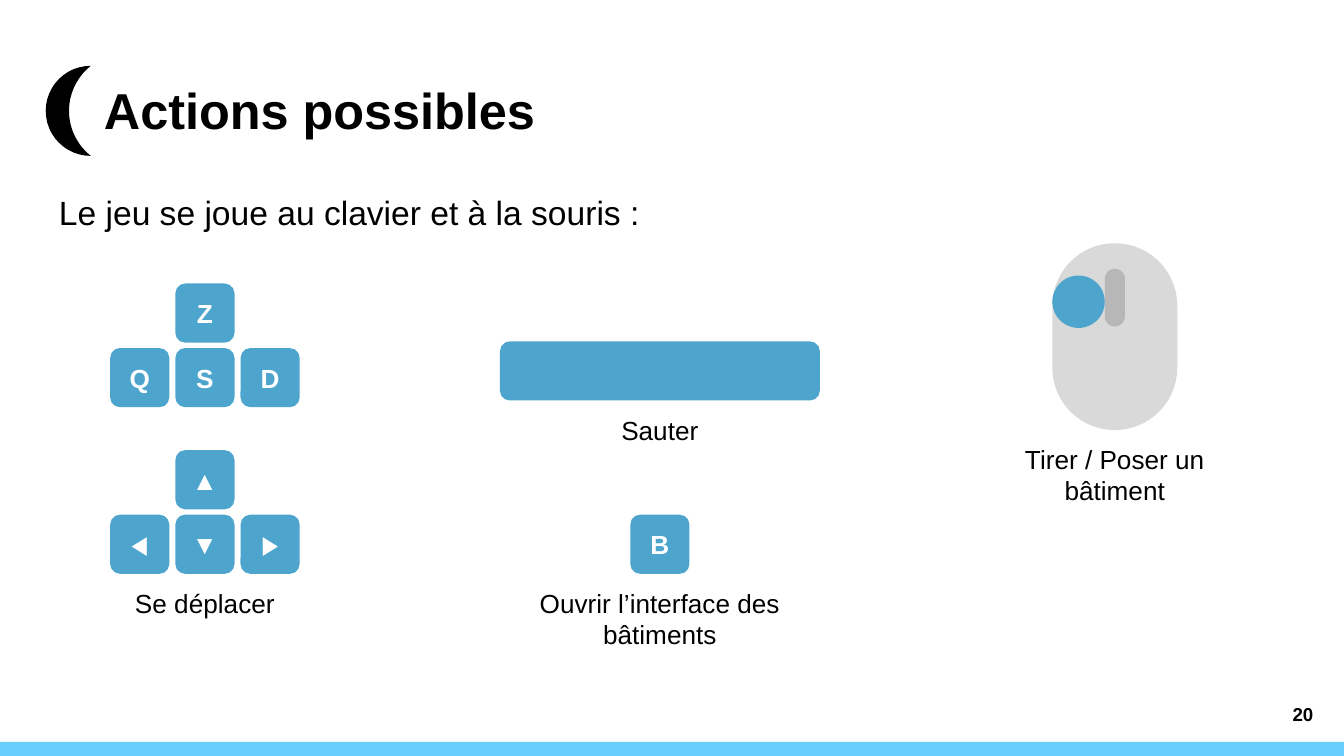
from dataclasses import dataclass

from pptx import Presentation
from pptx.dml.color import RGBColor
from pptx.enum.shapes import MSO_SHAPE
from pptx.enum.text import MSO_ANCHOR, PP_ALIGN
from pptx.util import Inches, Pt


@dataclass(frozen=True)
class Theme:
    """Colours, font and type sizes of the deck."""
    font: str = "Arial"
    ink: str = "000000"
    paper: str = "FFFFFF"
    key: str = "4DA5CE"
    band: str = "67CDFC"
    mouse: str = "D9D9D9"
    wheel: str = "B7B7B7"
    title: int = 27
    body: int = 18
    label: int = 14
    small: int = 10


THEME = Theme()
KEY = 0.44
ROUND = 0.167


def write(shape, text, size=THEME.label, color=THEME.ink, bold=False,
          align=PP_ALIGN.LEFT, anchor=MSO_ANCHOR.TOP, line=None, after=None):
    """Put one formatted paragraph into a shape."""
    frame = shape.text_frame
    frame.word_wrap = True
    frame.vertical_anchor = anchor
    frame.margin_left = frame.margin_right = Inches(0.1)
    frame.margin_top = frame.margin_bottom = Inches(0.1)
    para = frame.paragraphs[0]
    para.alignment = align
    if line:
        para.line_spacing = line
    if after:
        para.space_after = Pt(after)
    run = para.add_run()
    run.text = text
    run.font.name = THEME.font
    run.font.size = Pt(size)
    run.font.bold = bold
    run.font.color.rgb = RGBColor.from_string(color)


def add_text(slide, box, text, **style):
    """Add a text box that holds one paragraph."""
    write(slide.shapes.add_textbox(*map(Inches, box)), text, **style)


def add_form(slide, kind, box, color, adjust=None):
    """Add a flat preset shape and return it."""
    form = slide.shapes.add_shape(kind, *map(Inches, box))
    form.shadow.inherit = False
    form.fill.solid()
    form.fill.fore_color.rgb = RGBColor.from_string(color)
    form.line.fill.background()
    if adjust is not None:
        form.adjustments[0] = adjust
    return form


def add_key(slide, left, top, text="", width=KEY):
    """Add one keyboard key."""
    key = add_form(slide, MSO_SHAPE.ROUNDED_RECTANGLE,
                   (left, top, width, KEY), THEME.key, ROUND)
    if text:
        write(key, text, color=THEME.paper, bold=True,
              align=PP_ALIGN.CENTER, anchor=MSO_ANCHOR.MIDDLE)


def add_label(slide, center, top, text, height=KEY):
    """Add a caption centred under a control."""
    width = 2.13
    add_text(slide, (center - width / 2, top, width, height), text,
             align=PP_ALIGN.CENTER)


def add_pad(slide, box, letters):
    """Place four keys as a cross: up, left, down, right."""
    left, top, width, height = box
    step, drop = (width - KEY) / 2, height - KEY
    spots = ((1, 0), (0, 1), (1, 1), (2, 1))
    for letter, (col, row) in zip(letters, spots):
        add_key(slide, left + col * step, top + row * drop, letter)


def add_move(slide, box):
    """Draw both movement pads and their caption."""
    left, top, width, height = box
    for letters, shift in (("ZQSD", 0), ("▲◀▼▶", 1.24)):
        add_pad(slide, (left, top + shift, width, 0.92), letters)
    add_label(slide, left + width / 2, top + height, "Se déplacer")


def add_acts(slide, box):
    """Draw the space bar and the building key with captions."""
    left, top, width, height = box
    center = left + width / 2
    add_key(slide, left, top, width=width)
    add_label(slide, center, top + KEY, "Sauter")
    add_key(slide, center - KEY / 2, top + height - KEY, "B")
    add_label(slide, center, top + height,
              "Ouvrir l’interface des bâtiments", 0.67)


def add_mouse(slide, box):
    """Draw the mouse with its left button marked."""
    left, top, width, height = box
    center, wheel, dot = left + width / 2, 0.15, 0.39
    pill = MSO_SHAPE.ROUNDED_RECTANGLE
    add_form(slide, pill, box, THEME.mouse, 0.5)
    add_form(slide, pill, (center - wheel / 2, top + 0.19, wheel, 0.43),
             THEME.wheel, 0.5)
    add_form(slide, MSO_SHAPE.OVAL, (left, top + 0.24, dot, dot), THEME.key)
    add_label(slide, center, top + height, "Tirer / Poser un bâtiment", 0.67)


def add_head(slide, box):
    """Draw the moon and the title beside it."""
    left, top, width, height = box
    moon = height / 2
    add_form(slide, MSO_SHAPE.MOON, (left, top, moon, height),
             THEME.ink, 0.517)
    add_text(slide, (left + moon, top, width - moon, height),
             "Actions possibles", size=THEME.title, bold=True)


def add_foot(slide, box):
    """Draw the bottom band and the page number above it."""
    left, top, width, height = box
    add_form(slide, MSO_SHAPE.RECTANGLE, box, THEME.band)
    add_text(slide, (left + width - 0.73, top - 0.42, 0.6, 0.43), "20",
             size=THEME.small, bold=True, align=PP_ALIGN.RIGHT,
             anchor=MSO_ANCHOR.MIDDLE)


def main():
    """Build the slide and save it."""
    deck = Presentation()
    deck.slide_width, deck.slide_height = Inches(10), Inches(10 * 9 / 16)
    slide = deck.slides.add_slide(deck.slide_layouts[6])
    add_head(slide, (0.34, 0.49, 9.32, 0.67))
    add_foot(slide, (0, 5.52, 10, 0.11))
    add_text(slide, (0.34, 1.28, 9.32, 0.53),
             "Le jeu se joue au clavier et à la souris :",
             size=THEME.body, line=1.15, after=12)
    add_move(slide, (0.82, 2.11, 1.41, 2.16))
    add_acts(slide, (3.72, 2.54, 2.38, 1.73))
    add_mouse(slide, (7.83, 1.81, 0.93, 1.39))
    deck.save("out.pptx")


if __name__ == "__main__":
    main()
